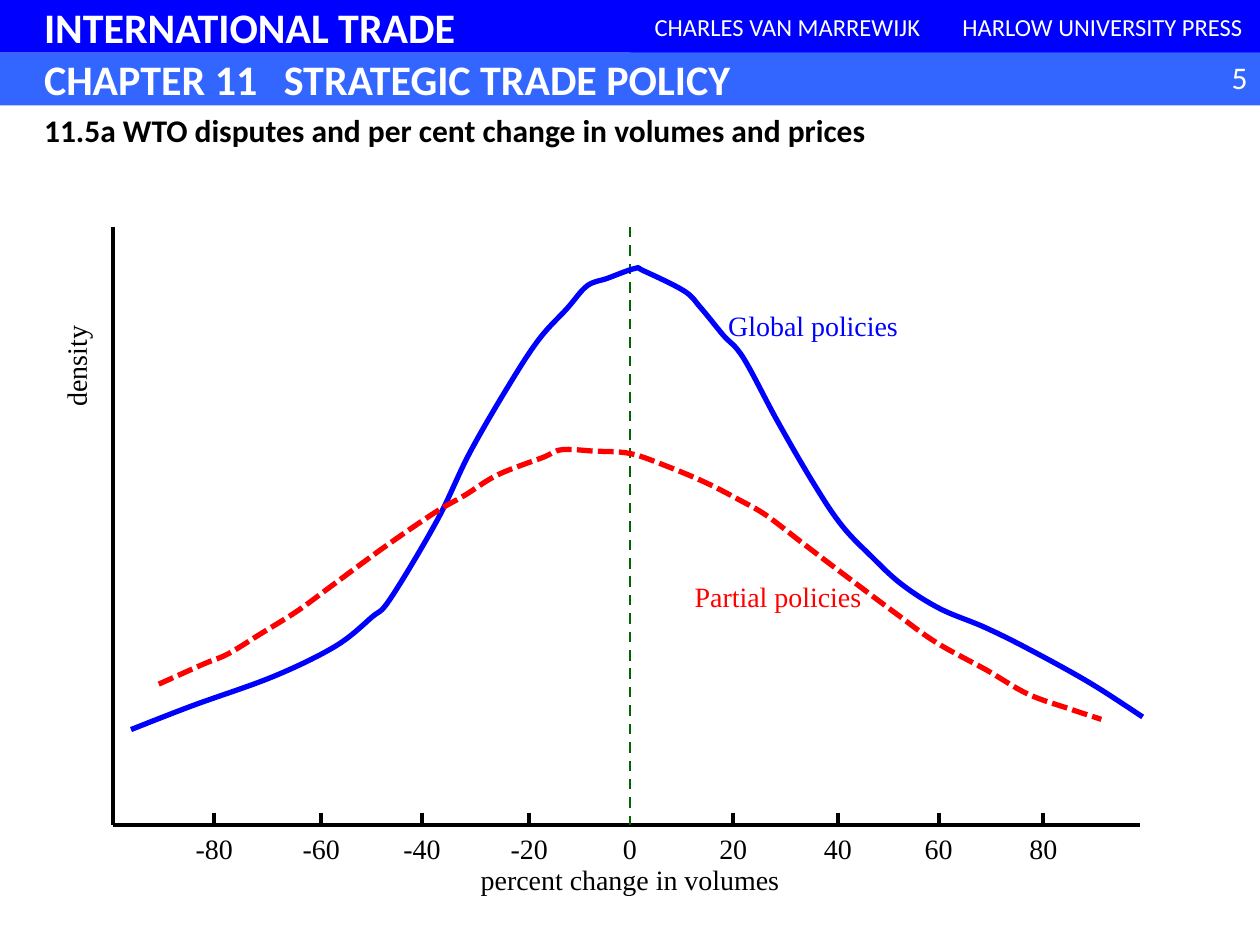
from lxml import etree
from pptx import Presentation
from pptx.dml.color import RGBColor
from pptx.enum.dml import MSO_LINE
from pptx.enum.shapes import MSO_CONNECTOR, MSO_SHAPE
from pptx.enum.text import MSO_ANCHOR, PP_ALIGN
from pptx.oxml.ns import qn
from pptx.util import Pt

LEFT, CENTER, RIGHT = PP_ALIGN.LEFT, PP_ALIGN.CENTER, PP_ALIGN.RIGHT
TOP, MIDDLE = MSO_ANCHOR.TOP, MSO_ANCHOR.MIDDLE
RECTANGLE, STRAIGHT = MSO_SHAPE.RECTANGLE, MSO_CONNECTOR.STRAIGHT
DASH, SHORT_DASH = MSO_LINE.DASH, MSO_LINE.SQUARE_DOT
TITLE_ONLY = 5
SANS, SERIF = "Calibri", "Times New Roman"
COLORS = {
    "book": "0000FF", "chapter": "3366FF", "white": "FFFFFF", "black": "000000",
    "zero": "006600", "global": "0000FF", "partial": "FF0000",
}
TICKS = {
    "-80": 57.6, "-60": 118.8, "-40": 176.4, "-20": 237.6, "0": 295.2,
    "20": 354.2, "40": 414, "60": 471.6, "80": 531.4,
}
GLOBAL_CURVE = [
    (10.1, 287.3), (45.4, 273.6), (91.4, 257), (126.7, 239.8), (147.6, 223.2),
    (158.4, 212.4), (185, 167.8), (203.8, 128.9), (226.8, 89.3), (243.4, 64.1),
    (259.2, 46.8), (270.7, 33.8), (282.2, 29.5), (298.1, 23.8), (303.1, 25.2),
    (326.2, 36.7), (335.5, 46.1), (348.5, 61.9), (360, 74.9), (379.4, 110.9),
    (400.3, 146.9), (416.2, 170.6), (433.4, 188.6), (450.7, 204.5), (472.3, 218.2),
    (498.2, 229), (524.2, 241.9), (558, 260.6), (588.2, 280.1),
]
PARTIAL_CURVE = [
    (25.9, 261.4), (51.8, 249.8), (65.5, 244.1), (84.2, 232.6), (105.1, 219.6),
    (123.8, 205.9), (154.1, 183.6), (183.6, 163.4), (200.9, 153.4), (219.6, 141.8),
    (245.5, 131.8), (256.3, 127.4), (274.3, 128.2), (295.2, 129.6), (316.1, 136.8),
    (338.4, 146.2), (357.8, 156.2), (373, 164.9), (394.6, 181.4), (418.3, 199.4),
    (447.1, 221), (470.2, 237.6), (499, 253.4), (522.7, 267.1), (547.2, 275.8),
    (564.5, 281.5),
]


def rgb(name):
    """Return the named colour."""
    return RGBColor.from_string(COLORS[name])


def write(shape, text, size, color, font, align=CENTER, anchor=TOP, bold=False, wrap=True):
    """Set and format the single paragraph of a shape."""
    frame = shape.text_frame
    frame.text = text
    frame.word_wrap = wrap
    frame.vertical_anchor = anchor
    paragraph = frame.paragraphs[0]
    paragraph.alignment = align
    for run in paragraph.runs:
        run.font.size = Pt(size)
        run.font.name = font
        run.font.bold = bold
        run.font.color.rgb = rgb(color)


def add_label(slide, box, text, color="black", size=16, font=SERIF, align=CENTER, wrap=False):
    """Add a text box and return it."""
    label = slide.shapes.add_textbox(*map(Pt, box))
    write(label, text, size, color, font, align, wrap=wrap)
    return label


def add_band(slide, box, color, text, size=24, align=LEFT, indent=7.2, bold=True):
    """Add a filled strip with white text and return it."""
    band = slide.shapes.add_shape(RECTANGLE, *map(Pt, box))
    band.shadow.inherit = False
    band.fill.solid()
    band.fill.fore_color.rgb = rgb(color)
    band.line.fill.background()
    write(band, text, size, "white", SANS, align, MIDDLE, bold)
    band.text_frame.margin_left = Pt(indent)
    return band


def add_line(slide, start, end, color="black", width=2.25, dash=None):
    """Add a straight line between two points."""
    line = slide.shapes.add_connector(STRAIGHT, *map(Pt, (*start, *end)))
    line.line.color.rgb = rgb(color)
    line.line.width = Pt(width)
    line.line.dash_style = dash
    etree.SubElement(line.element.spPr, qn("a:effectLst"))


def smooth_path(path):
    """Turn the straight segments of a path into flowing cubic curves."""
    points = [(int(point.get("x")), int(point.get("y"))) for point in path.iter(qn("a:pt"))]
    padded = [points[0], *points, points[-1]]
    segments = path.findall(qn("a:lnTo"))
    for segment, before, start, end, after in zip(
        segments, padded, padded[1:], padded[2:], padded[3:]
    ):
        first = [s + (e - b) / 6 for b, s, e in zip(before, start, end)]
        second = [e - (a - s) / 6 for s, e, a in zip(start, end, after)]
        curve = etree.Element(qn("a:cubicBezTo"))
        for x, y in (first, second, end):
            etree.SubElement(curve, qn("a:pt"), x=str(round(x)), y=str(round(y)))
        path.replace(segment, curve)


def add_curve(slide, left, top, offsets, color, dash=None):
    """Add an open smooth curve through offsets from the plot corner."""
    points = [(Pt(left + x), Pt(top + y)) for x, y in offsets]
    builder = slide.shapes.build_freeform(*points[0])
    builder.add_line_segments(points[1:], close=False)
    curve = builder.convert_to_shape()
    curve.shadow.inherit = False
    curve.fill.background()
    curve.line.color.rgb = rgb(color)
    curve.line.width = Pt(3)
    curve.line.dash_style = dash
    smooth_path(next(curve.element.iter(qn("a:path"))))


def add_header(slide, left, top, width, height):
    """Place the book strip, the chapter strip and the slide number."""
    band = height / 2
    indent = 25.2
    add_band(slide, (left, top, width, band), "book", "INTERNATIONAL TRADE", indent=indent)
    for part, text in enumerate(("CHARLES VAN MARREWIJK", "HARLOW UNIVERSITY PRESS"), 2):
        box = (left + part * width / 4, top, width / 4, band)
        add_band(slide, box, "book", text, 14, CENTER, bold=False)
    chapter = add_band(
        slide, (left, top + band, width, band), "chapter",
        "CHAPTER 11\tSTRATEGIC TRADE POLICY", indent=indent,
    )
    paragraph_format = chapter.element.find(".//" + qn("a:pPr"))
    tabs = etree.SubElement(paragraph_format, qn("a:tabLst"))
    etree.SubElement(tabs, qn("a:tab"), pos=str(Pt(137)), algn="l")
    number_box = (left + width - 48, top + band - 0.7, 48, 29)
    add_label(slide, number_box, "5", "white", 18, SANS, RIGHT, True)


def add_heading(slide, left, top, width, height):
    """Place the slide title."""
    title = slide.shapes.title
    title.left, title.top, title.width, title.height = map(Pt, (left, top, width, height))
    text = "11.5a WTO disputes and per cent change in volumes and prices"
    write(title, text, 18, "black", SANS, LEFT, bold=True)


def add_density_plot(slide, left, top, width, height):
    """Place the axes, ticks, density curves and labels."""
    bottom = top + height
    zero = left + TICKS["0"]
    label_height = 26.6
    tick_width = 42
    add_line(slide, (left, bottom), (left + width, bottom))
    add_line(slide, (left, top), (left, bottom))
    add_line(slide, (zero, top), (zero, bottom), "zero", 1.5, DASH)
    for text, offset in TICKS.items():
        x = left + offset
        if text != "0":
            add_line(slide, (x, bottom - 7.2), (x, bottom))
        add_label(slide, (x - tick_width / 2, bottom, tick_width, label_height), text)
    add_label(slide, (zero - 94, bottom + 18, 188, label_height), "percent change in volumes")
    density = add_label(slide, (left - 34.6, top + 52.6, 33.8, 54), "density")
    density.element.find(".//" + qn("a:bodyPr")).set("vert", "vert270")
    add_curve(slide, left, top, GLOBAL_CURVE, "global")
    add_label(slide, (left + 343.4, top + 43.2, 113, label_height), "Global policies", "global")
    add_curve(slide, left, top, PARTIAL_CURVE, "partial", SHORT_DASH)
    add_label(slide, (left + 324, top + 198, 111.6, label_height), "Partial policies", "partial")


def main():
    """Build and save the presentation."""
    presentation = Presentation()
    presentation.slide_width, presentation.slide_height = Pt(720), Pt(540)
    slide = presentation.slides.add_slide(presentation.slide_layouts[TITLE_ONLY])
    add_header(slide, 0, 0, 720, 60.2)
    add_heading(slide, 18, 60, 564, 29)
    add_density_plot(slide, 64.8, 129.6, 586.8, 342)
    presentation.save("out.pptx")


if __name__ == "__main__":
    main()
